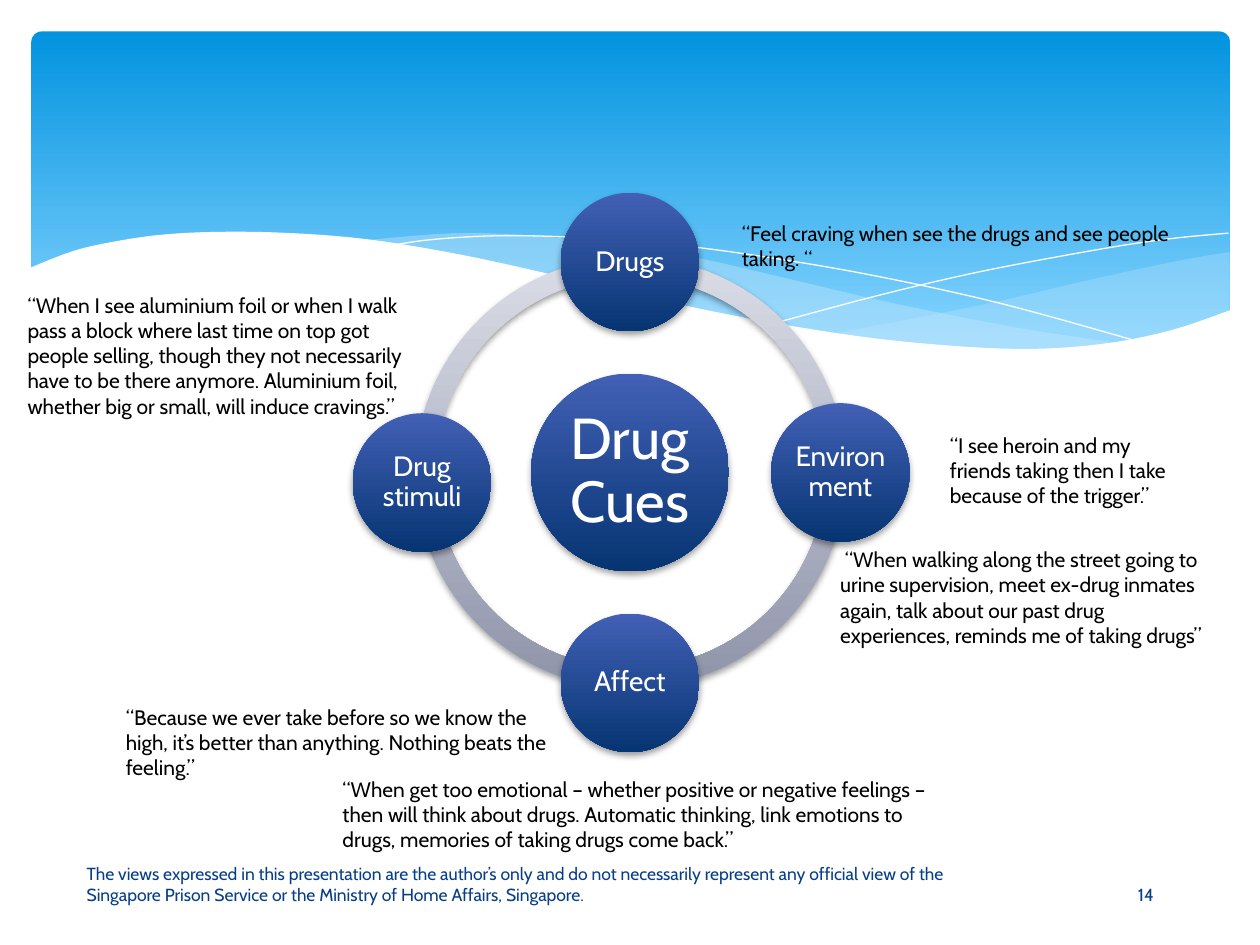
from dataclasses import dataclass, field

from lxml import etree
from pptx import Presentation
from pptx import util as u
from pptx.dml.color import RGBColor
from pptx.enum import shapes, text
from pptx.oxml.ns import qn


@dataclass(frozen=True)
class Theme:
    font: str = "Cabin"
    white: str = "FFFFFF"
    black: str = "000000"
    footer: str = "073E87"
    veil: str = "C6E7FC"
    sky: tuple = ("0293E0", "83D3FE")
    ring: tuple = ("DADCE6", "8F94AA")
    ball: tuple = ("4260B5", "063573")
    hub_size: float = 33
    ball_size: float = 16
    quote_size: float = 12
    footer_size: float = 10


@dataclass(frozen=True)
class Wave:
    edges: list
    opacity: int = 100
    color: str = "FFFFFF"
    filled: bool = True


@dataclass(frozen=True)
class Ball:
    label: str
    column: float
    row: float
    diameter: float = 11
    size: float = 16
    inset: float = 0.2


@dataclass(frozen=True)
class Arc:
    start: float
    end: float
    column: float = 32.9


@dataclass(frozen=True)
class Note:
    words: str
    column: float
    row: float
    columns: float
    rows: float
    size: float = 12
    color: str = "000000"
    grows: bool = True
    align: text.PP_ALIGN = text.PP_ALIGN.LEFT
    bottom_inset: float = 0.5


THEME = Theme()
COLUMNS, ROWS = 100, 75
UNIT = u.Inches(10) // COLUMNS
RING_ROW, RING_SIZE = 20.4, 34.2
CURVE_STEPS = 5

WAVES = [
    Wave([[(97.6, 20), (93.5, 20.7), (86.1, 22.3), (77.9, 24.2), (66.1, 26.5)],
          [(66.1, 26.5), (71.9, 27.2), (76.9, 27.7), (82.4, 27.7), (87.2, 27.4),
           (92.1, 26.5), (97.6, 24.7)]], 29, THEME.veil),
    Wave([[(89.3, 27.3), (80.7, 26), (70.6, 24), (62.9, 22.2), (55.5, 20.5),
           (48.9, 19.4), (42, 18.7), (36.1, 18.5), (28.6, 19.1)],
          [(28.6, 19.1), (36.2, 20.3), (44.9, 22.2), (56.6, 24.8), (65, 26.4),
           (72.2, 27.4), (78.5, 27.8), (84.8, 27.7), (89.3, 27.3)]], 40, THEME.veil),
    Wave([[(30.9, 19.5), (34.4, 19), (40.1, 18.7), (46.9, 18.9), (53.3, 19.4),
           (60.8, 20.4), (69.5, 21.9), (79.5, 24.1), (90.7, 27.2)]], filled=False),
    Wave([[(61.3, 25.7), (69.5, 23.5), (77.6, 21.6), (86.6, 19.9), (92.4, 19),
           (97.5, 18.5)]], filled=False),
    Wave([[(97.7, 24.6), (93, 26.2), (87.5, 27.3), (80.9, 27.7), (72.6, 27.2),
           (64.8, 26.2), (55.5, 24.5), (44.7, 22), (36.5, 20.2), (29.2, 19),
           (23, 18.5), (17.7, 18.4), (13.2, 18.6), (9.5, 19.1), (5.9, 19.9),
           (2.3, 21.3)],
          [(2.3, 32.9)], [(97.7, 32.9)]]),
]

ARCS = [Arc(177.3, 269.5, 33), Arc(90.5, 177.3, 33), Arc(0, 90), Arc(270, 0)]

BALLS = [
    Ball("Drug Cues", 50, 37.5, 15.7, THEME.hub_size, 0.5),
    Ball("Drugs", 50, 20.8),
    Ball("Environment", 66.7, 37.5),
    Ball("Affect", 50, 54.2),
    Ball("Drug stimuli", 33.5, 38.3),
]

NOTES = [
    Note("“Feel craving when see the drugs and see people taking. “", 57.9, 17, 36.2, 5),
    Note("“Because we ever take before so we know the high, it’s better than anything. "
         "Nothing beats the feeling.”", 9, 55.4, 36.2, 7.1),
    Note(" “When walking along the street going to urine supervision, meet ex-drug "
         "inmates again, talk about our past drug experiences, reminds me of taking "
         "drugs”", 65.7, 42.9, 31.3, 11.1),
    Note("“When I see aluminium foil or when I walk pass a block where last time on top "
         "got people selling, though they not necessarily have to be there anymore. "
         "Aluminium foil, whether big or small, will induce cravings.”",
         1.2, 22.7, 33.9, 11.1),
    Note("The views expressed in this presentation are the author’s only and do not "
         "necessarily represent any official view of the Singapore Prison Service or "
         "the Ministry of Home Affairs, Singapore.", 5.9, 69, 75.6, 4,
         THEME.footer_size, THEME.footer, False, bottom_inset=2.1),
    Note("14", 84.6, 69, 12.7, 4, THEME.footer_size, THEME.footer, False,
         text.PP_ALIGN.CENTER),
    Note("“I see heroin and my friends taking then I take because of the trigger.”",
         74.4, 33.8, 21.3, 7.1),
    Note("“When get too emotional – whether positive or negative feelings – then will "
         "think about drugs. Automatic thinking, link emotions to drugs, memories of "
         "taking drugs come back.”", 26.2, 61.1, 50, 7.1),
]


def grid(*lengths: float) -> list[int]:
    return [round(length * UNIT) for length in lengths]


def smooth(knots: list) -> list:
    padded = [knots[0], *knots, knots[-1]]
    points = [knots[0]]
    for a, b, c, d in zip(padded, padded[1:], padded[2:], padded[3:]):
        for step in range(1, CURVE_STEPS + 1):
            t = step / CURVE_STEPS
            points.append(tuple(
                q + t * (r - p + t * (2 * p - 5 * q + 4 * r - s
                                      + t * (3 * q - p - 3 * r + s))) / 2
                for p, q, r, s in zip(a, b, c, d)))
    return points


def fill_gradient(shape, colors: tuple, last_stop: float = 1) -> None:
    shape.fill.gradient()
    shape.fill.gradient_angle = 270
    for stop, color, position in zip(shape.fill.gradient_stops, colors, (0, last_stop)):
        stop.color.rgb = RGBColor.from_string(color)
        stop.position = position


def add_shape(slide, kind, box: tuple, colors: tuple, last_stop: float = 1):
    shape = slide.shapes.add_shape(kind, *grid(*box))
    shape.shadow.inherit = False
    shape.line.fill.background()
    fill_gradient(shape, colors, last_stop)
    return shape


def cast_shadow(shape) -> None:
    effects = shape._element.spPr.find(qn("a:effectLst"))
    shadow = etree.SubElement(effects, qn("a:outerShdw"), blurRad=str(u.Pt(4)),
                              dist=str(u.Pt(2)), dir="5400000", rotWithShape="0")
    color = etree.SubElement(shadow, qn("a:srgbClr"), val=THEME.black)
    etree.SubElement(color, qn("a:alpha"), val="38000")


def write(frame, words: str, size: float, color: str, align) -> None:
    frame.word_wrap = True
    paragraph = frame.paragraphs[0]
    paragraph.text = words
    paragraph.alignment = align
    paragraph.font.name = THEME.font
    paragraph.font.size = u.Pt(size)
    paragraph.font.color.rgb = RGBColor.from_string(color)


def draw_wave(slide, wave: Wave) -> None:
    points = [grid(*point) for edge in wave.edges for point in smooth(edge)]
    builder = slide.shapes.build_freeform(*points[0])
    builder.add_line_segments(points[1:], close=wave.filled)
    shape = builder.convert_to_shape()
    shape.shadow.inherit = False
    color = RGBColor.from_string(wave.color)
    if not wave.filled:
        shape.fill.background()
        shape.line.color.rgb = color
        shape.line.width = u.Pt(0)
        return
    shape.line.fill.background()
    shape.fill.solid()
    shape.fill.fore_color.rgb = color
    if wave.opacity < 100:
        node = shape._element.spPr.find(qn("a:solidFill")).find(qn("a:srgbClr"))
        etree.SubElement(node, qn("a:alpha"), val=str(wave.opacity * 1000))


def draw_arc(slide, arc: Arc) -> None:
    shape = add_shape(slide, shapes.MSO_SHAPE.BLOCK_ARC,
                      (arc.column, RING_ROW, RING_SIZE, RING_SIZE), THEME.ring)
    for index, value in enumerate((arc.start * 0.6, arc.end * 0.6, 0.046)):
        shape.adjustments[index] = value
    cast_shadow(shape)


def draw_ball(slide, ball: Ball) -> None:
    radius = ball.diameter / 2
    shape = add_shape(slide, shapes.MSO_SHAPE.OVAL, (ball.column - radius, ball.row - radius,
                      ball.diameter, ball.diameter), THEME.ball)
    cast_shadow(shape)
    frame = shape.text_frame
    frame.margin_left, frame.margin_top, frame.margin_right, frame.margin_bottom = grid(
        *[ball.inset] * 4)
    frame.vertical_anchor = text.MSO_ANCHOR.MIDDLE
    write(frame, ball.label, ball.size, THEME.white, text.PP_ALIGN.CENTER)
    frame.paragraphs[0].line_spacing = 0.9


def draw_note(slide, note: Note) -> None:
    box = grid(note.column, note.row, note.columns, note.rows)
    frame = slide.shapes.add_textbox(*box).text_frame
    write(frame, note.words, note.size, note.color, note.align)
    frame.margin_bottom = grid(note.bottom_inset)[0]
    if note.grows:
        frame.auto_size = text.MSO_AUTO_SIZE.SHAPE_TO_FIT_TEXT
    else:
        frame.vertical_anchor = text.MSO_ANCHOR.MIDDLE


def main() -> None:
    presentation = Presentation()
    presentation.slide_width, presentation.slide_height = grid(COLUMNS, ROWS)
    slide = presentation.slides.add_slide(presentation.slide_layouts[6])
    sky = add_shape(slide, shapes.MSO_SHAPE.ROUNDED_RECTANGLE, (2.5, 2.5, 95.1, 27),
                    THEME.sky, 0.9)
    sky.adjustments[0] = 0.03
    for items, draw in ((WAVES, draw_wave), (ARCS, draw_arc),
                        (BALLS, draw_ball), (NOTES, draw_note)):
        for item in items:
            draw(slide, item)
    presentation.save("out.pptx")


if __name__ == "__main__":
    main()
